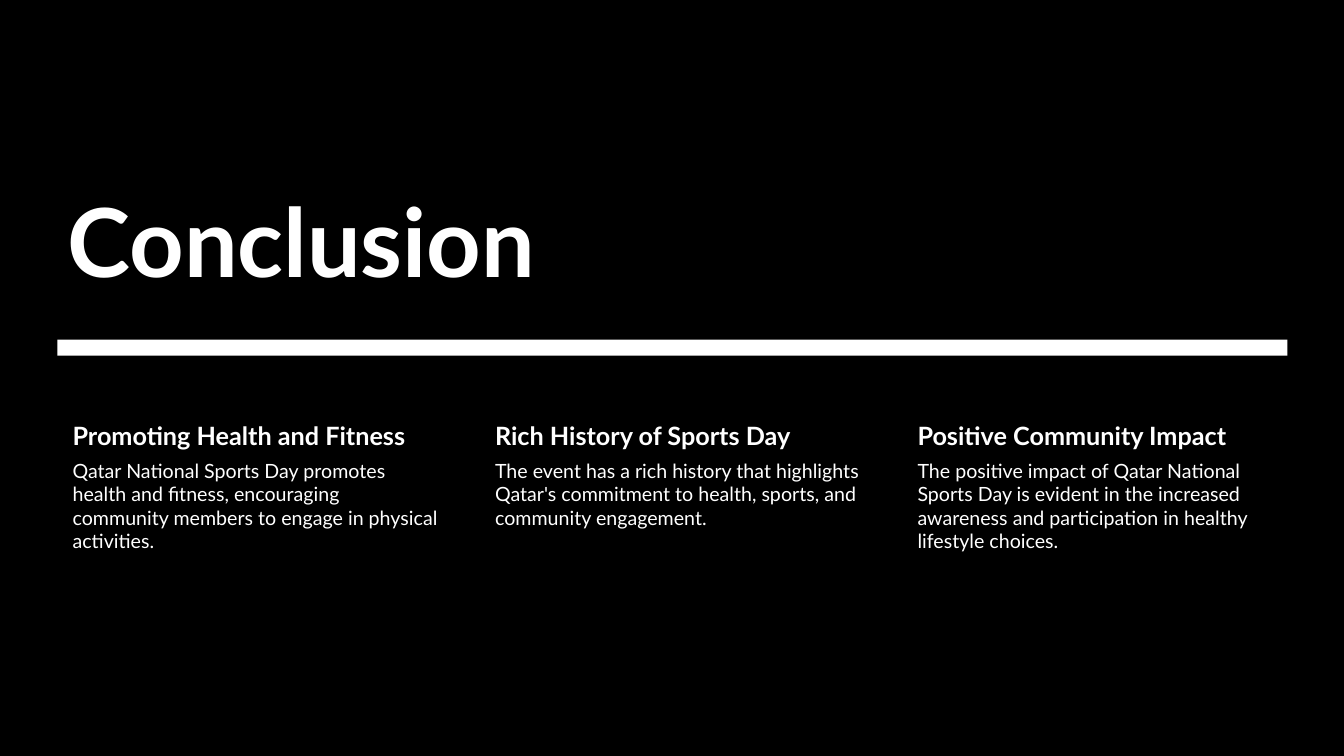
import pptx
import pptx.util
import pptx.dml.color
import pptx.enum.shapes
import pptx.enum.text

Inches = pptx.util.Inches
ANCHOR = pptx.enum.text.MSO_ANCHOR

BLACK, WHITE = "000000", "FFFFFF"
SLIDE_W, SLIDE_H = 13.33, 7.5
LEFT, WIDTH = 0.57, 12.2
COLUMN_W, COLUMN_STEP = 3.81, 4.19
HEADING_H = 0.39

TAKEAWAYS = [
    ("Promoting Health and Fitness",
     "Qatar National Sports Day promotes health and fitness, encouraging "
     "community members to engage in physical activities."),
    ("Rich History of Sports Day",
     "The event has a rich history that highlights Qatar's commitment to "
     "health, sports, and community engagement."),
    ("Positive Community Impact",
     "The positive impact of Qatar National Sports Day is evident in the "
     "increased awareness and participation in healthy lifestyle choices."),
]


def rgb(color):
    return pptx.dml.color.RGBColor.from_string(color)


def add_bar(s, x, y, w, h, color):
    """Add a plain filled rectangle without outline."""
    sp = s.shapes.add_shape(pptx.enum.shapes.MSO_SHAPE.RECTANGLE,
                            Inches(x), Inches(y), Inches(w), Inches(h))
    sp.shadow.inherit = False
    sp.fill.solid()
    sp.fill.fore_color.rgb = rgb(color)
    sp.line.fill.background()


def add_text(s, x, y, w, h, text, size, bold=False,
             insets=(0.1, 0.05, 0.1, 0.05), anchor=ANCHOR.TOP):
    """Add a white text box; insets are left, top, right, bottom."""
    sp = s.shapes.add_textbox(Inches(x), Inches(y), Inches(w), Inches(h))
    tf = sp.text_frame
    tf.word_wrap = True
    tf.vertical_anchor = anchor
    (tf.margin_left, tf.margin_top,
     tf.margin_right, tf.margin_bottom) = map(Inches, insets)
    tf.text = text
    font = tf.paragraphs[0].runs[0].font
    font.name = "Lato"
    font.size = pptx.util.Pt(size)
    font.bold = bold
    font.color.rgb = rgb(WHITE)


def add_takeaway(s, x, y, w, h, heading, body):
    add_text(s, x, y, w, HEADING_H, heading, 18, True,
             insets=(0.15, 0.03, 0.03, 0.03))
    add_text(s, x, y + HEADING_H, w, h - HEADING_H, body, 14,
             insets=(0.15, 0.02, 0.02, 0.02))


def add_conclusion_slide(prs):
    s = prs.slides.add_slide(prs.slide_layouts[6])
    s.background.fill.solid()
    s.background.fill.fore_color.rgb = rgb(BLACK)
    add_bar(s, 0, 0, SLIDE_W, SLIDE_H, BLACK)
    add_bar(s, LEFT, 3.37, WIDTH, 0.16, WHITE)
    add_text(s, LEFT, 1.45, WIDTH, 1.54, "Conclusion", 68, True,
             anchor=ANCHOR.BOTTOM)
    for i, (heading, body) in enumerate(TAKEAWAYS):
        add_takeaway(s, LEFT + i * COLUMN_STEP, 4.14, COLUMN_W, 2.68,
                     heading, body)


def main():
    prs = pptx.Presentation()
    prs.slide_width = Inches(SLIDE_W)
    prs.slide_height = Inches(SLIDE_H)
    add_conclusion_slide(prs)
    prs.save("out.pptx")


if __name__ == "__main__":
    main()
